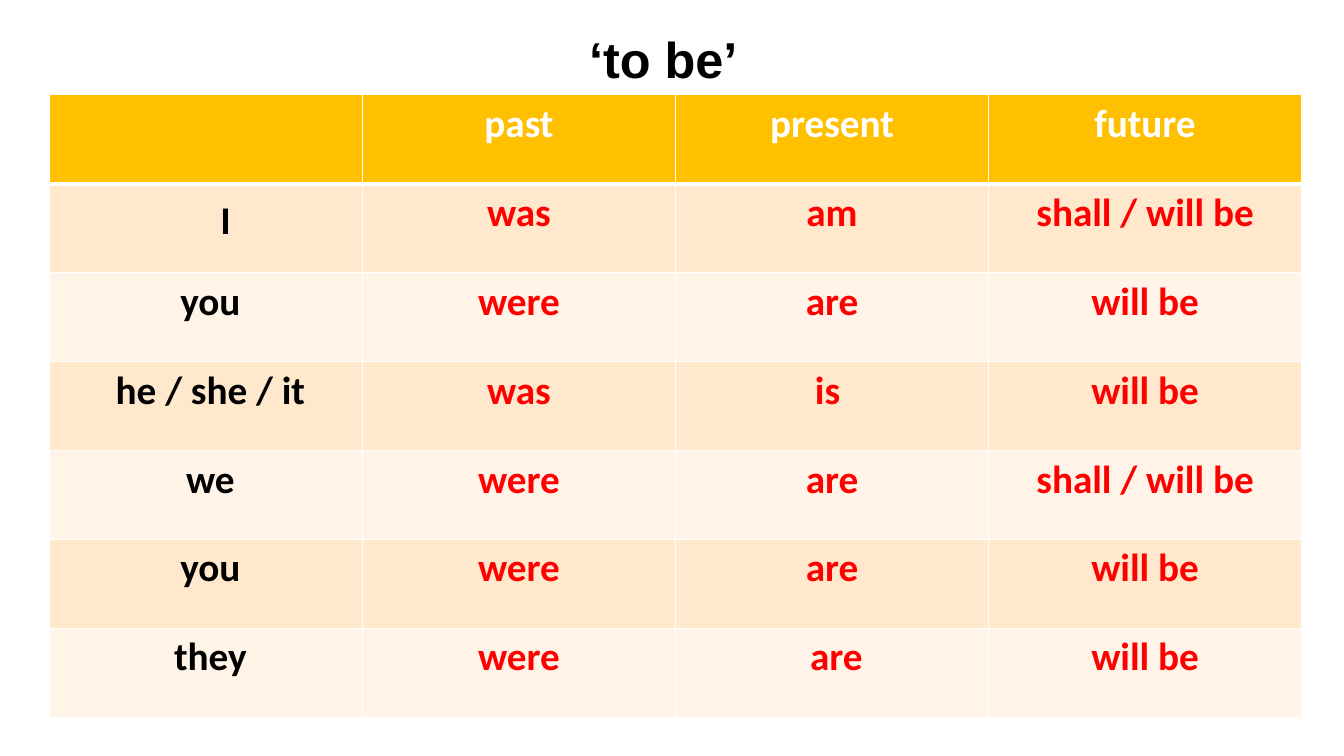
from lxml import etree
from pptx import Presentation
from pptx.dml.color import RGBColor
from pptx.enum.text import MSO_AUTO_SIZE as AUTO, PP_ALIGN as ALIGN
from pptx.oxml.ns import qn
from pptx.util import Inches, Pt

WHITE = RGBColor(0xFF, 0xFF, 0xFF)
BLACK = RGBColor(0x00, 0x00, 0x00)
RED = RGBColor(0xFF, 0x00, 0x00)
GOLD = RGBColor(0xFF, 0xC0, 0x00)
PEACH = RGBColor(0xFF, 0xE8, 0xCC)
CREAM = RGBColor(0xFF, 0xF4, 0xE7)

ROWS = [
    ["", "past", "present", "future"],
    ["　I", "was", "am", "shall / will be"],
    [" you", "were", "are", "will be"],
    [" he / she / it", "was", "is ", "will be"],
    [" we", "were", "are", "shall / will be"],
    [" you", "were", "are", "will be"],
    [" they", "were", " are", "will be"],
]


def write(tf, text, color, **fmt):
    p = tf.paragraphs[0]
    p.alignment = ALIGN.CENTER
    r = p.add_run()
    r.text = text
    r.font.color.rgb = color
    for name, value in fmt.items():
        setattr(r.font, name, value)


def add_border(cell, side, width):
    ln = etree.SubElement(cell._tc.get_or_add_tcPr(), qn(f"a:ln{side}"), w=str(Pt(width)))
    fill = etree.SubElement(ln, qn("a:solidFill"))
    etree.SubElement(fill, qn("a:srgbClr"), val=str(WHITE))


prs = Presentation()
prs.slide_width, prs.slide_height = Inches(13.33), Inches(7.5)
s = prs.slides.add_slide(prs.slide_layouts[6])

table = s.shapes.add_table(
    len(ROWS), len(ROWS[0]), Inches(0.49), Inches(0.94), Inches(12.42), Inches(6.18)
).table
for i, row in enumerate(ROWS):
    for j, text in enumerate(row):
        cell = table.cell(i, j)
        for side in "LRTB":
            under_header = (i, side) in [(0, "B"), (1, "T")]
            add_border(cell, side, 3 if under_header else 1)
        cell.fill.solid()
        cell.fill.fore_color.rgb = GOLD if i == 0 else PEACH if i % 2 else CREAM
        if text:
            color = WHITE if i == 0 else BLACK if j == 0 else RED
            write(cell.text_frame, text, color, name="Calibri", size=Pt(28), bold=True)

title = s.shapes.add_textbox(Inches(3.88), Inches(0.23), Inches(5.26), Inches(0.71))
tf = title.text_frame
tf.word_wrap = True
tf.auto_size = AUTO.SHAPE_TO_FIT_TEXT
write(tf, " ‘to be’", BLACK, name="Arial", size=Pt(36), bold=True)

prs.save("out.pptx")
